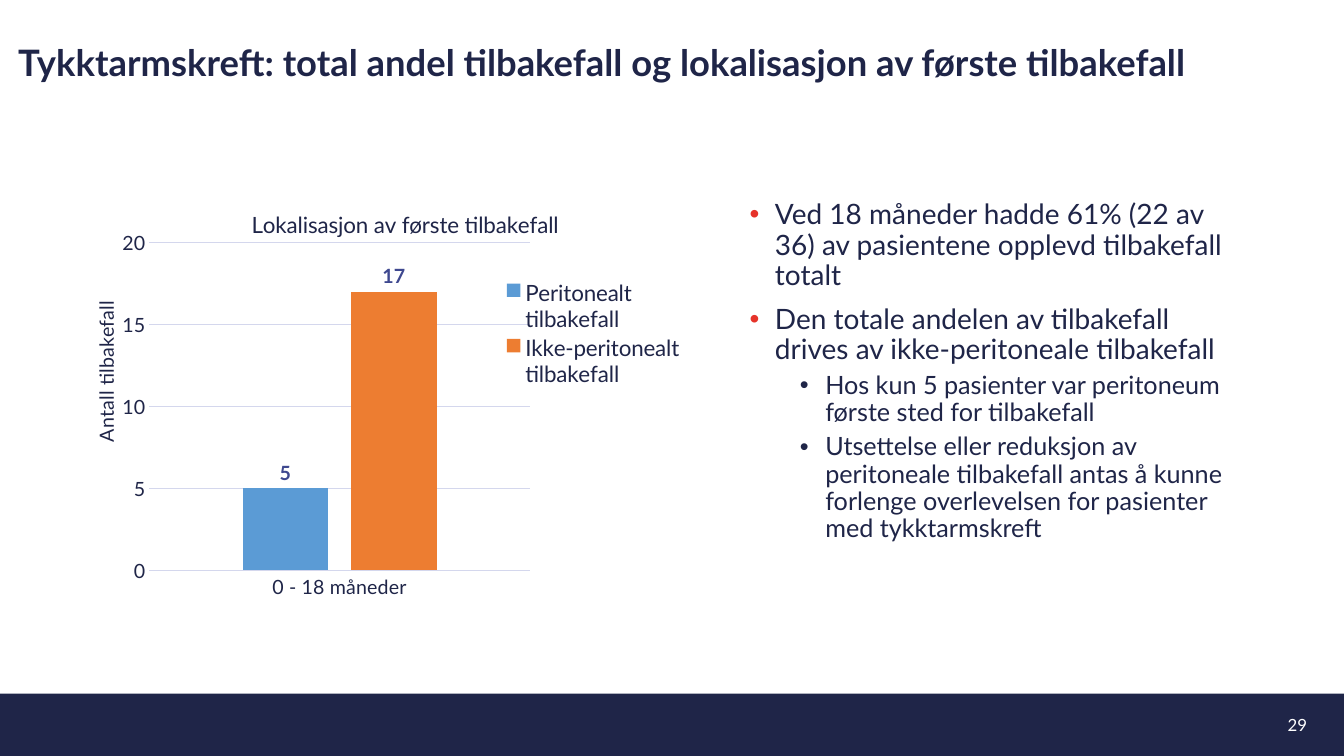
from dataclasses import dataclass
from lxml.etree import SubElement
from pptx import Presentation
from pptx.chart.data import CategoryChartData
from pptx.dml.color import RGBColor
from pptx.enum.chart import (XL_CHART_TYPE as ChartType, XL_LABEL_POSITION as LabelPosition,
                             XL_LEGEND_POSITION as LegendPosition, XL_TICK_MARK as TickMark)
from pptx.enum.shapes import MSO_SHAPE as Shape
from pptx.enum.text import MSO_ANCHOR as Anchor, PP_ALIGN as Align
from pptx.oxml import parse_xml
from pptx.oxml.ns import nsdecls, qn
from pptx.util import Cm, Pt


@dataclass(frozen=True)
class Theme:
    font: str = "Lato"
    chart_font: str = "Calibri"
    navy: str = "1F2548"
    white: str = "FFFFFF"
    red: str = "E6332A"
    grid: str = "D4D7ED"
    value: str = "3E488F"
    bars: tuple = ("5B9BD5", "ED7D31")
    title: int = 26
    body: tuple = (20, 18)
    chart_title: int = 16
    axis: int = 14
    number: int = 12


@dataclass(frozen=True)
class Box:
    left: float
    top: float
    width: float
    height: float

    def lengths(self):
        return Cm(self.left), Cm(self.top), Cm(self.width), Cm(self.height)


THEME = Theme()
BULLETS = [
    (0, "Ved 18 måneder hadde 61% (22 av 36) av pasientene opplevd tilbakefall totalt"),
    (0, "Den totale andelen av tilbakefall drives av ikke-peritoneale tilbakefall"),
    (1, "Hos kun 5 pasienter var peritoneum første sted for tilbakefall"),
    (1, "Utsettelse eller reduksjon av peritoneale tilbakefall antas å kunne "
        "forlenge overlevelsen for pasienter med tykktarmskreft"),
]
RECURRENCES = {"Peritonealt tilbakefall": 5, "Ikke-peritonealt tilbakefall": 17}


def style_font(font, size, color=THEME.navy, bold=False, name=THEME.font):
    font.name = name
    font.size = Pt(size)
    font.bold = bold
    font.color.rgb = RGBColor.from_string(color)


def add_text_frame(page, box):
    frame = page.shapes.add_textbox(*box.lengths()).text_frame
    frame.word_wrap = True
    return frame


def add_title(page, box):
    frame = add_text_frame(page, box)
    frame.margin_left = 0
    para = frame.paragraphs[0]
    para.text = "Tykktarmskreft: total andel tilbakefall og lokalisasjon av første tilbakefall"
    para.line_spacing = 0.9
    style_font(para.font, THEME.title, bold=True)


def add_bullet(para, level):
    props = para._p.get_or_add_pPr()
    props.set("marL", str(Cm((0.64, 1.91)[level])))
    props.set("indent", str(-Cm(0.64)))
    color = SubElement(props, qn("a:buClr"))
    SubElement(color, qn("a:srgbClr"), val=(THEME.red, THEME.navy)[level])
    SubElement(props, qn("a:buFont"), typeface="Arial")
    SubElement(props, qn("a:buChar"), char="•")


def add_findings(page, box):
    frame = add_text_frame(page, box)
    for index, (level, text) in enumerate(BULLETS):
        para = frame.add_paragraph() if index else frame.paragraphs[0]
        para.text = text
        para.level = level
        add_bullet(para, level)
        para.line_spacing = 0.9
        para.space_before = Pt((10, 5)[level] if index else 0)
        style_font(para.font, THEME.body[level])


def add_layout(before, inner=False, **places):
    target = '<c:layoutTarget val="inner"/>' if inner else ""
    modes = "".join(f'<c:{key}Mode val="edge"/>' for key in ("x", "y"))
    values = "".join(f'<c:{key} val="{value}"/>' for key, value in places.items())
    before.addnext(parse_xml(
        f'<c:layout {nsdecls("c")}><c:manualLayout>{target}{modes}{values}'
        '</c:manualLayout></c:layout>'))


def set_chart_text(title, text, size, x, y):
    para = title.text_frame.paragraphs[0]
    para.text = text
    style_font(para.font, size)
    element = title._element
    for layout in element.findall(qn("c:layout")):
        element.remove(layout)
    add_layout(element.find(qn("c:tx")), x=x, y=y)


def style_axes(chart):
    for axis in (chart.category_axis, chart.value_axis):
        axis.major_tick_mark = axis.minor_tick_mark = TickMark.NONE
        style_font(axis.tick_labels.font, THEME.axis)
    values = chart.value_axis
    values.minimum_scale, values.maximum_scale, values.major_unit = 0, 20, 5
    values.format.line.fill.background()
    for line in (chart.category_axis.format.line, values.major_gridlines.format.line):
        line.width = Pt(0.75)
        line.color.rgb = RGBColor.from_string(THEME.grid)
    set_chart_text(values.axis_title, "Antall tilbakefall", THEME.axis, 0.02, 0.24)


def style_legend(chart):
    chart.has_legend = True
    legend = chart.legend
    legend.position = LegendPosition.BOTTOM
    legend.include_in_layout = False
    style_font(legend.font, THEME.chart_title)
    element = legend._element
    for layout in element.findall(qn("c:layout")):
        element.remove(layout)
    add_layout(element.find(qn("c:legendPos")), x=0.7, y=0.19, w=0.3, h=0.27)


def add_recurrence_chart(page, box):
    data = CategoryChartData()
    data.categories = ["0 - 18 måneder"]
    for name, count in RECURRENCES.items():
        data.add_series(name, [count])
    chart = page.shapes.add_chart(ChartType.COLUMN_CLUSTERED, *box.lengths(), data).chart
    style_font(chart.font, 10, name=THEME.chart_font)
    chart.has_title = True
    set_chart_text(chart.chart_title, "Lokalisasjon av første tilbakefall",
                   THEME.chart_title, 0.28, 0.02)
    style_axes(chart)
    style_legend(chart)
    plot = chart.plots[0]
    plot.gap_width, plot.overlap = 219, -27
    plot.vary_by_categories = False
    for series, color in zip(plot.series, THEME.bars):
        series.format.fill.solid()
        series.format.fill.fore_color.rgb = RGBColor.from_string(color)
        labels = series.data_labels
        labels.show_value = True
        labels.position = LabelPosition.OUTSIDE_END
        style_font(labels.font, THEME.axis, THEME.value, bold=True)
    area = chart._chartSpace.chart.plotArea
    for layout in area.findall(qn("c:layout")):
        area.remove(layout)
    anchor = SubElement(area, qn("c:layout"))
    area.insert(0, anchor)
    add_layout(anchor, inner=True, x=0.12, y=0.11, w=0.62, h=0.78)
    area.remove(anchor)


def add_footer(page, box):
    band = page.shapes.add_shape(Shape.RECTANGLE, *box.lengths())
    band.shadow.inherit = False
    band.fill.solid()
    band.fill.fore_color.rgb = RGBColor.from_string(THEME.navy)
    band.line.fill.background()
    number_box = Box(box.left + box.width - 2.2, box.top + 0.27, 1.27, 1.02)
    frame = add_text_frame(page, number_box)
    frame.margin_right = 0
    frame.vertical_anchor = Anchor.MIDDLE
    para = frame.paragraphs[0]
    para.text = "29"
    para.alignment = Align.RIGHT
    style_font(para.font, THEME.number, THEME.white)


def main():
    deck = Presentation()
    deck.slide_width, deck.slide_height = Cm(33.87), Cm(19.05)
    page = deck.slides.add_slide(deck.slide_layouts[6])
    add_footer(page, Box(0, 17.48, 33.87, 1.57))
    add_title(page, Box(0.46, 1.02, 29.72, 2.01))
    add_recurrence_chart(page, Box(1.91, 4.95, 15.47, 10.59))
    add_findings(page, Box(18.64, 4.93, 12.8, 11.63))
    deck.save("out.pptx")


if __name__ == "__main__":
    main()
